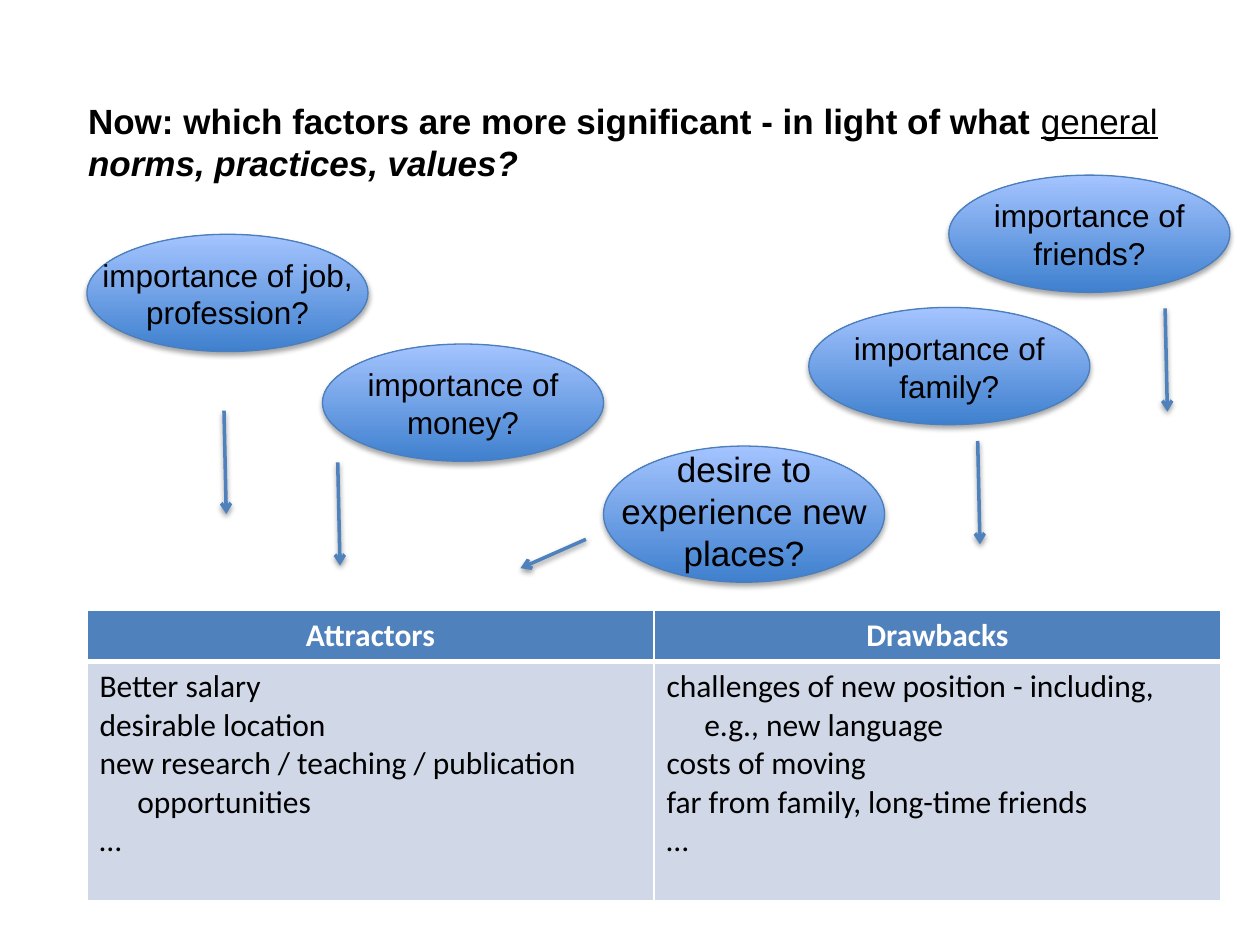
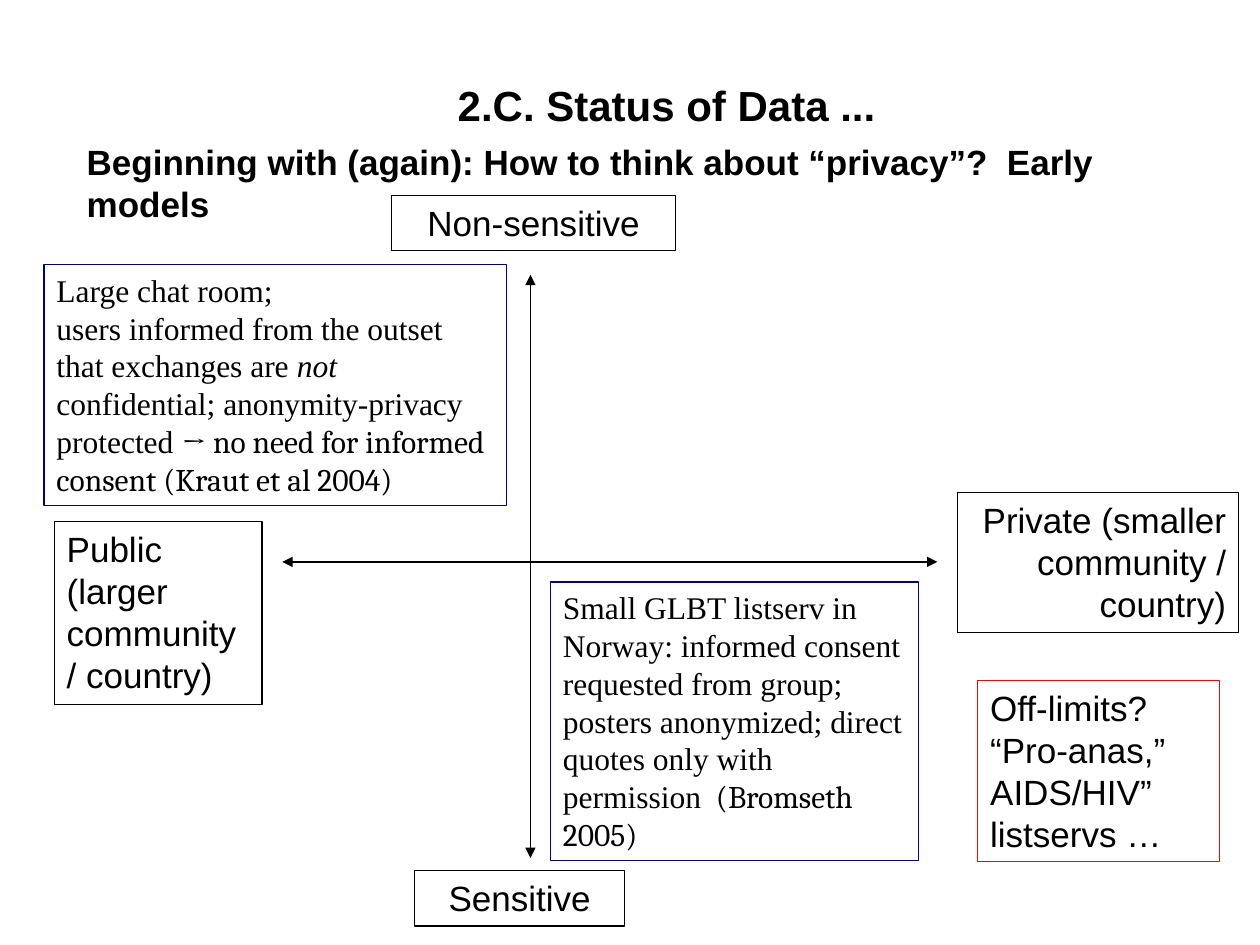
from lxml.etree import SubElement
from pptx import Presentation
from pptx.dml.color import RGBColor
from pptx.enum.shapes import MSO_CONNECTOR as Connector, MSO_SHAPE as Shape
from pptx.enum.text import MSO_ANCHOR as Anchor, PP_ALIGN as Align
from pptx.oxml.ns import qn
from pptx.util import Pt

BLACK = RGBColor(0x00, 0x00, 0x00)
WHITE = RGBColor(0xFF, 0xFF, 0xFF)
RED = RGBColor(0xFF, 0x00, 0x00)
NAVY = RGBColor(0x00, 0x00, 0x80)
BLUE = RGBColor(0x4F, 0x81, 0xBD)
PALE_BLUE = RGBColor(0xD0, 0xD8, 0xE8)
OVAL_LINE = RGBColor(0x4B, 0x7E, 0xBC)
OVAL_DARK = RGBColor(0x3F, 0x80, 0xCE)
OVAL_LIGHT = RGBColor(0xA4, 0xC4, 0xFF)

SANS, SERIF, CAMBRIA, TABLE_FONT = "Arial", "Times New Roman", "Cambria", "Calibri"
OVAL_WIDTH = 160.6
BULLET_INDENT = 21.6


def points(*lengths):
    return [Pt(length) for length in lengths]


def write(para, spans, font=SANS, size=20, bold=False, color=BLACK, align=Align.LEFT):
    """Fill a paragraph from a string, or from (text, font overrides) pairs."""
    para.alignment = align
    para.font.name, para.font.size = font, Pt(size)
    para.font.bold, para.font.color.rgb = bold, color
    for text, overrides in [(spans, {})] if isinstance(spans, str) else spans:
        for number, line in enumerate(text.split("\n")):
            if number:
                para.add_line_break()
            span = para.add_run()
            span.text = line
            for name, value in overrides.items():
                setattr(span.font, name, value)


def set_indent(para, left, first=0):
    properties = para._p.get_or_add_pPr()
    properties.set("marL", str(Pt(left)))
    properties.set("indent", str(Pt(first)))


def add_text(shapes, place, spans, anchor=Anchor.TOP, **style):
    box = shapes.add_textbox(*points(*place))
    box.text_frame.word_wrap = True
    box.text_frame.vertical_anchor = anchor
    para = box.text_frame.paragraphs[0]
    write(para, spans, **style)
    return para


def add_frame(page, place, spans, line=BLACK, **style):
    """Add an unfilled, outlined rectangle holding text."""
    box = page.shapes.add_shape(Shape.RECTANGLE, *points(*place))
    box.shadow.inherit = False
    box.fill.background()
    box.line.color.rgb, box.line.width = line, Pt(0.75)
    box.text_frame.word_wrap = True
    box.text_frame.vertical_anchor = Anchor.TOP
    write(box.text_frame.paragraphs[0], spans, **style)


def set_shadow(shape, opacity=0, distance=0):
    """Give a shape a soft shadow below it, or none when opacity is zero."""
    effects = SubElement(shape._element.spPr, qn("a:effectLst"))
    if opacity:
        shadow = SubElement(effects, qn("a:outerShdw"), blurRad=str(Pt(3.1)),
                            dist=str(Pt(distance)), dir="5400000", rotWithShape="0")
        color = SubElement(shadow, qn("a:srgbClr"), val=str(BLACK))
        SubElement(color, qn("a:alpha"), val=str(opacity * 1000))


def add_arrow(page, start, end, color, width, **heads):
    """Add a line; heads maps headEnd / tailEnd to an arrowhead type."""
    arrow = page.shapes.add_connector(Connector.STRAIGHT, *points(*start, *end))
    arrow.line.color.rgb, arrow.line.width = color, Pt(width)
    line = arrow.line._get_or_add_ln()
    for tag, kind in heads.items():
        SubElement(line, qn(f"a:{tag}"), type=kind)
    return arrow


def add_factor_arrow(page, start, end):
    set_shadow(add_arrow(page, start, end, BLUE, 2, tailEnd="arrow"), 38, 1.6)


def add_axis(page, start, end):
    set_shadow(add_arrow(page, start, end, BLACK, 0.75, headEnd="triangle", tailEnd="triangle"))


def add_factor(page, left, top, text, height=67, text_offset=8.6, text_height=51.1, size=18):
    """Add a shaded oval with its question over it."""
    group = page.shapes.add_group_shape()
    oval = group.shapes.add_shape(Shape.OVAL, *points(left, top, OVAL_WIDTH, height))
    oval.fill.gradient()
    oval.fill.gradient_angle = 90
    for stop, color in zip(oval.fill.gradient_stops, (OVAL_DARK, OVAL_LIGHT)):
        stop.color.rgb = color
    oval.line.color.rgb, oval.line.width = OVAL_LINE, Pt(0.75)
    set_shadow(oval, 35, 1.8)
    add_text(group.shapes, (left, top + text_offset, OVAL_WIDTH, text_height), text,
             size=size, align=Align.CENTER)


def set_borders(cell, top, bottom):
    properties = cell._tc.get_or_add_tcPr()
    for side, width in zip("LRTB", (1, 1, top, bottom)):
        line = SubElement(properties, qn(f"a:ln{side}"), w=str(Pt(width)))
        fill = SubElement(line, qn("a:solidFill"))
        SubElement(fill, qn("a:srgbClr"), val=str(WHITE))


def add_comparison(page, place, columns, row_heights):
    """Add a table with one heading and one list of points per column."""
    table = page.shapes.add_table(2, len(columns), *points(*place)).table
    for row, height in zip(table.rows, row_heights):
        row.height = Pt(height)
    for index, (heading, items) in enumerate(columns):
        head, body = table.cell(0, index), table.cell(1, index)
        for cell, color, top, bottom in ((head, BLUE, 1, 3), (body, PALE_BLUE, 3, 1)):
            set_borders(cell, top, bottom)
            cell.fill.solid()
            cell.fill.fore_color.rgb = color
        write(head.text_frame.paragraphs[0], heading, TABLE_FONT, 18, True, WHITE, Align.CENTER)
        for number, item in enumerate(items):
            frame = body.text_frame
            para = frame.add_paragraph() if number else frame.paragraphs[0]
            set_indent(para, BULLET_INDENT, -BULLET_INDENT)
            write(para, item, TABLE_FONT, 18)


def build_factors(page):
    question = add_text(page.shapes, (15.1, 53.3, 682.6, 58.3), [
        ("Now: which factors are more significant - in light of what ", {}),
        ("general", {"bold": False, "underline": True}),
        (" ", {}),
        ("norms, practices, values?", {"italic": True}),
    ], bold=True)
    set_indent(question, 28.1)

    add_factor(page, 344.9, 254.9, "desire to experience new places?",
               height=77.8, text_offset=-2.9, text_height=72.7, size=20)
    for left, top, subject in (
        (462.2, 175.7, "family"),
        (184.3, 196.6, "money"),
        (49.7, 133.9, "job, profession"),
        (542.2, 100.1, "friends"),
    ):
        add_factor(page, left, top, f"importance of {subject}?")

    add_factor_arrow(page, (334.8, 308.2), (297.4, 324.7))
    for x, y in ((128, 234.7), (193, 264.2), (558.7, 252), (665.8, 176.2)):
        add_factor_arrow(page, (x, y), (x + 1.3, y + 59))

    add_comparison(page, (49.7, 348.8, 648, 166), (
        ("Attractors", ("Better salary", "desirable location",
                        "new research / teaching / publication opportunities", "…")),
        ("Drawbacks", ("challenges of new position - including, e.g., new language",
                       "costs of moving", "far from family, long-time friends", "…")),
    ), (29.2, 136.8))


def build_privacy_models(page):
    add_text(page.shapes, (77.8, 37.4, 606.2, 45.4), "2.C. Status of Data ...",
             Anchor.MIDDLE, size=24, bold=True, align=Align.CENTER)
    add_text(page.shapes, (42.5, 77, 657.4, 391.7),
             "Beginning with (again): How to think about “privacy”?\u00a0 Early models".replace("\u00a0", " "),
             bold=True)

    add_axis(page, (303.1, 157), (303.1, 490.3))
    add_axis(page, (161.3, 321.1), (535.7, 321.1))
    add_frame(page, (223.9, 111.6, 162, 31.7), "Non-sensitive", align=Align.CENTER)
    add_frame(page, (236.9, 497.5, 120.2, 31.7), "Sensitive", align=Align.CENTER)
    add_frame(page, (31, 298.1, 118.8, 104.4), "Public\n(larger community / country)")
    add_frame(page, (547.2, 281.5, 160.6, 79.9), "Private (smaller community / country)",
              align=Align.RIGHT)

    add_frame(page, (25.2, 151.2, 264.2, 137.5), [
        ("Large chat room;\nusers informed from the outset that exchanges are ", {}),
        ("not", {"italic": True}),
        (" confidential; anonymity-privacy protected ", {}),
        ("→ no need for informed consent (Kraut et al 2004)", {"name": CAMBRIA}),
    ], NAVY, font=SERIF, size=18)
    add_frame(page, (314.6, 332.6, 210.2, 159.1), [
        ("Small GLBT listserv in Norway: informed consent requested from group; "
         "posters anonymized; direct quotes only with permission ", {}),
        (" (Bromseth 2005)", {"name": CAMBRIA}),
    ], NAVY, font=SERIF, size=18)
    add_frame(page, (558.7, 388.8, 138.2, 103.7),
              "Off-limits?\n“Pro-anas,” AIDS/HIV” listservs …", RED)


def main():
    deck = Presentation()
    deck.slide_width, deck.slide_height = points(720, 540)
    blank = deck.slide_layouts[6]
    for build in (build_factors, build_privacy_models):
        build(deck.slides.add_slide(blank))
    deck.save("out.pptx")


if __name__ == "__main__":
    main()
